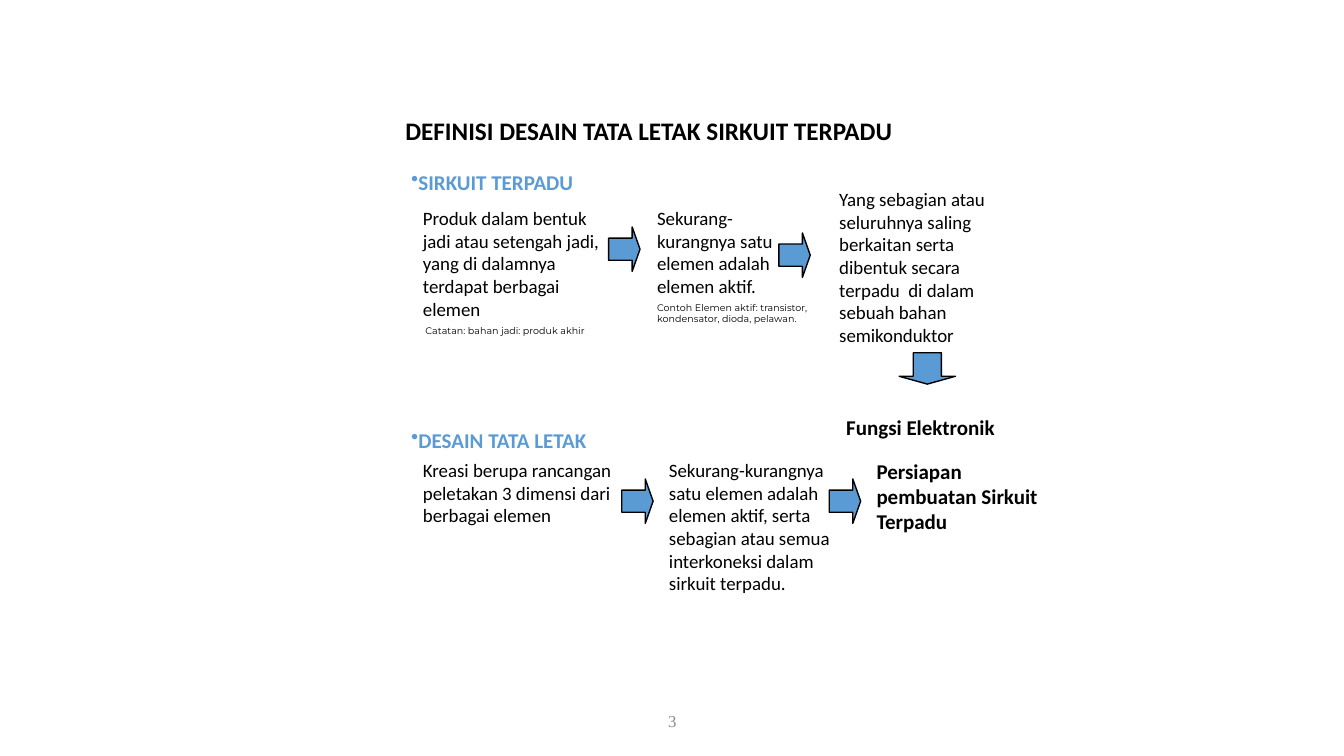
from lxml.etree import SubElement
from pptx import Presentation
from pptx.dml.color import RGBColor as Rgb
from pptx.enum.shapes import MSO_SHAPE as Form
from pptx.enum.text import MSO_ANCHOR as Anchor, MSO_AUTO_SIZE as Fit, PP_ALIGN as Align
from pptx.oxml.ns import qn
from pptx.util import Cm, Pt

HUES = {"ink": "000000", "blue": "5B9BD5", "gray": "8C8C8C"}
HEAD = {"size": 15, "bold": True}
NOTE = {"size": 6.8, "face": "Montserrat"}


def paint(para, size=13.5, hue="ink", bold=False, face="Calibri"):
    for run in para.runs:
        font = run.font
        font.name, font.size, font.bold = face, Pt(size), bold
        font.color.rgb = Rgb.from_string(HUES[hue])


def write(slide, box, words, bullet=False, note=None, align=Align.LEFT, **look):
    frame = slide.shapes.add_textbox(*map(Cm, box)).text_frame
    frame.word_wrap = True
    frame.auto_size = Fit.SHAPE_TO_FIT_TEXT
    para = frame.paragraphs[0]
    para.text = words
    para.alignment = align
    if bullet:
        SubElement(para._p.get_or_add_pPr(), qn("a:buChar")).set("char", "•")
    paint(para, **look)
    if note:
        para = frame.add_paragraph()
        para.text = note
        para.space_before = Pt(NOTE["size"] / 2)
        paint(para, **NOTE)
    return frame


def arrow(slide, left, top, down=False):
    form, size = (Form.DOWN_ARROW, (1.42, 0.79)) if down else (Form.RIGHT_ARROW, (0.79, 1.12))
    shape = slide.shapes.add_shape(form, *map(Cm, (left, top, *size)))
    shape.shadow.inherit = False
    shape.adjustments[0], shape.adjustments[1] = 0.5, 0.25
    shape.fill.solid()
    shape.fill.fore_color.rgb = Rgb.from_string(HUES["blue"])
    shape.line.color.rgb = Rgb.from_string(HUES["ink"])
    shape.line.width = Pt(1)


def title(slide, box):
    shape = slide.shapes.title
    shape.left, shape.top, shape.width, shape.height = map(Cm, box)
    frame = shape.text_frame
    frame.text = "DEFINISI DESAIN TATA LETAK SIRKUIT TERPADU"
    frame.vertical_anchor = Anchor.MIDDLE
    para = frame.paragraphs[0]
    para.alignment = Align.LEFT
    para.line_spacing = 0.9
    paint(para, 18, bold=True)


def label(slide, left, top, words):
    write(slide, (left, top, 7.47, 0.89), words, bullet=True, hue="blue", **HEAD)


def circuit(slide, left, top):
    label(slide, left, top, "SIRKUIT TERPADU")
    row = top + 0.94
    write(slide, (left + 0.3, row, 5.08, 3.58),
          "Produk dalam bentuk jadi atau setengah jadi, yang di dalamnya terdapat berbagai elemen",
          note=" Catatan: bahan jadi: produk akhir")
    write(slide, (left + 6.2, row, 4.29, 3.58),
          "Sekurang-kurangnya satu elemen adalah elemen aktif.",
          note="Contoh Elemen aktif: transistor, kondensator, dioda, pelawan.")
    write(slide, (left + 10.79, top + 0.46, 4.93, 4.29),
          "Yang sebagian atau seluruhnya saling berkaitan serta dibentuk secara "
          "terpadu  di dalam sebuah bahan semikonduktor")
    arrow(slide, left + 5.23, top + 1.58)
    arrow(slide, left + 9.52, top + 1.73)
    arrow(slide, left + 12.55, top + 4.75, down=True)
    write(slide, (left + 10.79, top + 6.17, 4.6, 0.89), "Fungsi Elektronik",
          align=Align.CENTER, **HEAD)


def layout(slide, left, top):
    label(slide, left, top, "DESAIN TATA LETAK")
    row = top + 0.79
    write(slide, (left + 0.3, row, 5.56, 1.98),
          "Kreasi berupa rancangan peletakan 3 dimensi dari berbagai elemen")
    write(slide, (left + 6.5, row, 4.6, 3.71),
          "Sekurang-kurangnya satu elemen adalah elemen aktif, serta sebagian "
          "atau semua interkoneksi dalam sirkuit terpadu.")
    write(slide, (left + 11.73, row, 4.6, 2.18),
          "Persiapan pembuatan Sirkuit Terpadu", **HEAD)
    for shift in (5.56, 10.79):
        arrow(slide, left + shift, top + 1.43)


def footer(slide, box):
    frame = write(slide, box, "3", align=Align.CENTER, size=12, hue="gray",
                  face="Times New Roman")
    frame.auto_size = Fit.NONE
    frame.vertical_anchor = Anchor.MIDDLE


def main():
    deck = Presentation()
    deck.slide_width, deck.slide_height = Cm(33.87), Cm(19.05)
    slide = deck.slides.add_slide(deck.slide_layouts[5])
    title(slide, (9.96, 2.69, 16.21, 1.27))
    circuit(slide, 10.11, 4.14)
    layout(slide, 10.11, 10.64)
    footer(slide, (11.23, 17.65, 11.43, 1.02))
    deck.save("out.pptx")


if __name__ == "__main__":
    main()
